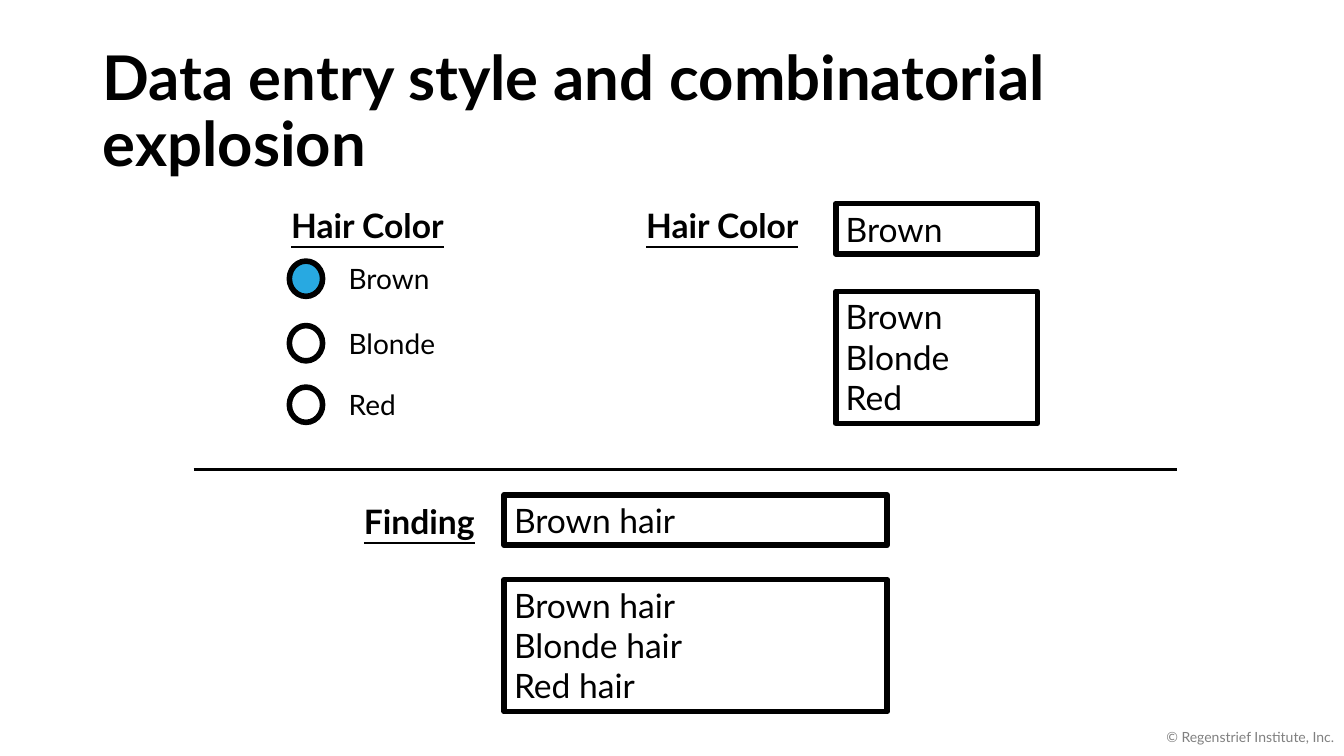
"""Build the slide on data entry style and combinatorial explosion."""
from lxml import etree
from pptx import Presentation
from pptx.dml.color import RGBColor
from pptx.enum.shapes import MSO_CONNECTOR, MSO_SHAPE
from pptx.enum.text import MSO_ANCHOR, PP_ALIGN
from pptx.oxml.ns import qn
from pptx.util import Inches, Pt

RECTANGLE, OVAL = MSO_SHAPE.RECTANGLE, MSO_SHAPE.OVAL
STRAIGHT = MSO_CONNECTOR.STRAIGHT
TOP, MIDDLE = MSO_ANCHOR.TOP, MSO_ANCHOR.MIDDLE
LEFT, RIGHT = PP_ALIGN.LEFT, PP_ALIGN.RIGHT
COLORS = {"ink": "000000", "selected": "28A9E1", "copyright": "808080"}


def write(holder, lines, size, color="ink", bold=False, underline=False,
          wrap=True, anchor=TOP, align=LEFT, spacing=None):
    frame = holder.text_frame
    frame.word_wrap = wrap
    frame.vertical_anchor = anchor
    for index, line in enumerate(lines):
        paragraph = frame.add_paragraph() if index else frame.paragraphs[0]
        paragraph.alignment = align
        paragraph.line_spacing = spacing
        run = paragraph.add_run()
        run.text = line
        run.font.name = "Lato"
        run.font.size = Pt(size)
        run.font.bold = bold
        run.font.underline = underline
        run.font.color.rgb = RGBColor.from_string(COLORS[color])


def outline(preset, left, top, width, height, fill=None):
    shape = slide.shapes.add_shape(
        preset, Inches(left), Inches(top), Inches(width), Inches(height))
    shape.shadow.inherit = False
    if fill:
        shape.fill.solid()
        shape.fill.fore_color.rgb = RGBColor.from_string(COLORS[fill])
    else:
        shape.fill.background()
    shape.line.color.rgb = RGBColor.from_string(COLORS["ink"])
    shape.line.width = Pt(4)
    return shape


deck = Presentation()
deck.slide_width, deck.slide_height = Inches(13.33), Inches(7.5)
slide = deck.slides.add_slide(deck.slide_layouts[5])

title = slide.shapes.title
title.left, title.top = Inches(0.92), Inches(0.4)
title.width, title.height = Inches(11.5), Inches(1.45)
write(title, ["Data entry style and combinatorial explosion"], 44,
      bold=True, anchor=MIDDLE, spacing=0.9)

for heading, left, top, width in [("Hair Color", 2.79, 1.98, 1.74),
                                  ("Hair Color", 6.31, 1.98, 1.74),
                                  ("Finding", 3.51, 4.92, 1.31)]:
    heading_box = slide.shapes.add_textbox(
        Inches(left), Inches(top), Inches(width), Inches(0.5))
    write(heading_box, [heading], 24, bold=True, underline=True, wrap=False)

for color_name, top, fill in [("Brown", 2.59, "selected"),
                              ("Blonde", 3.23, None),
                              ("Red", 3.84, None)]:
    outline(OVAL, 2.87, top, 0.33, 0.35, fill)
    option = slide.shapes.add_textbox(
        Inches(3.36), Inches(top - 0.04), Inches(1.07), Inches(0.44))
    write(option, [color_name], 20, wrap=False)

hair_colors = ["Brown", "Blonde", "Red"]
findings = [f"{color_name} hair" for color_name in hair_colors]
for choices, left, field_top, list_top, width in [
        (hair_colors, 8.29, 2.02, 2.89, 2),
        (findings, 5, 4.91, 5.75, 3.8)]:
    write(outline(RECTANGLE, left, field_top, width, 0.5), choices[:1], 24)
    write(outline(RECTANGLE, left, list_top, width, 1.31), choices, 24)

divider = slide.shapes.add_connector(
    STRAIGHT, Inches(1.92), Inches(4.66), Inches(11.67), Inches(4.66))
divider.line.color.rgb = RGBColor.from_string(COLORS["ink"])
divider.line.width = Pt(2.25)
etree.SubElement(divider._element.spPr, qn("a:effectLst"))

copyright_line = slide.shapes.add_textbox(
    Inches(10.33), Inches(7.11), Inches(3), Inches(0.4))
write(copyright_line, ["© Regenstrief Institute, Inc."], 10, "copyright",
      anchor=MIDDLE, align=RIGHT)

deck.save("out.pptx")
